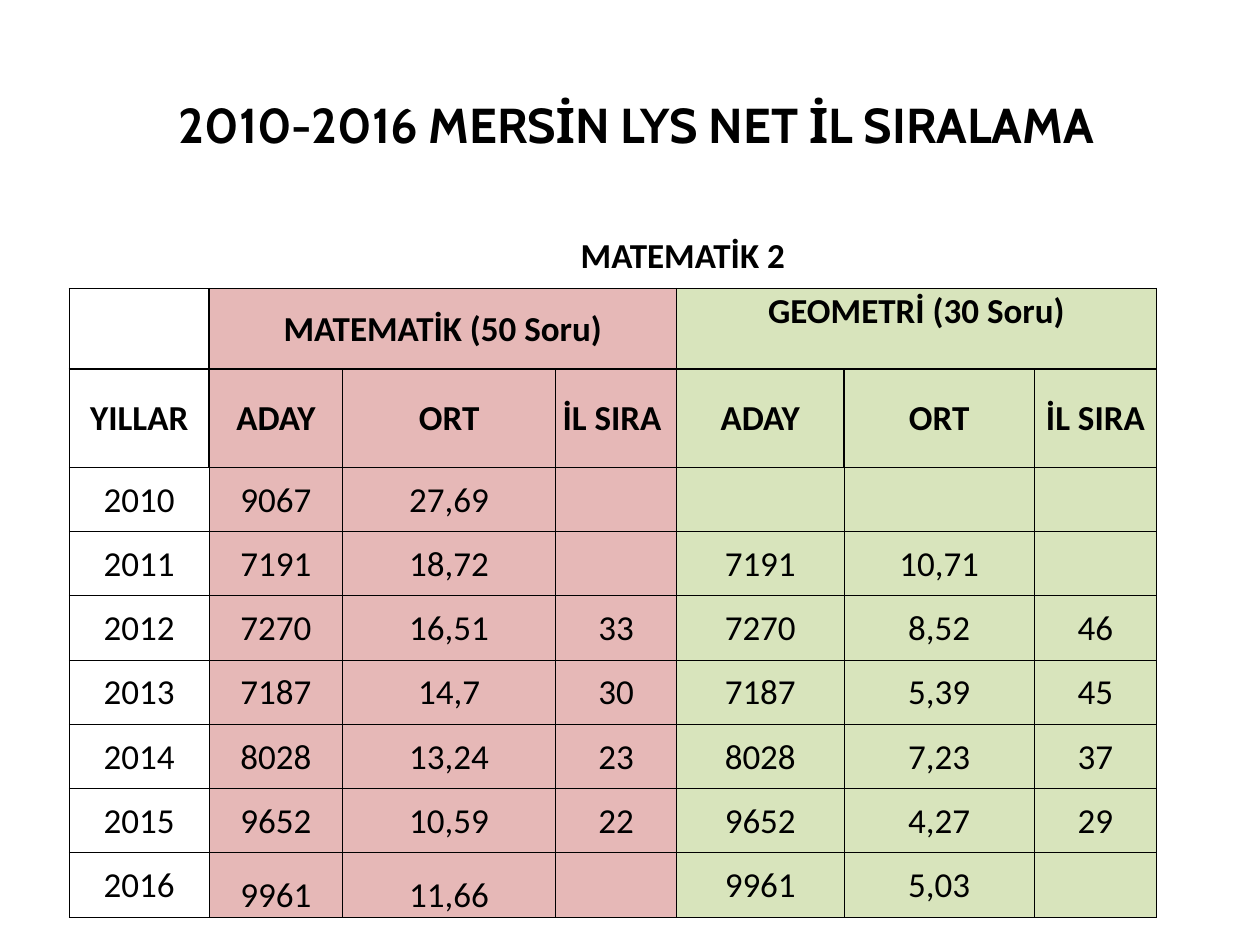
from dataclasses import dataclass

from lxml import etree
from pptx import Presentation
from pptx import util as u
from pptx.dml.color import RGBColor
from pptx.enum import text
from pptx.oxml.ns import qn


@dataclass(frozen=True)
class Theme:
    ink: str = "000000"
    maths: str = "E6B8B7"
    geometry: str = "D8E4BC"
    title_font: str = "Cabin"
    table_font: str = "Calibri"
    title_size: int = 28
    table_size: int = 20
    thin: float = 0.5
    thick: float = 1


THEME = Theme()
TITLE = "2010-2016 MERSİN LYS NET İL SIRALAMA"
COLUMNS = [1.11, 1.06, 1.69, 0.96, 1.33, 1.51, 0.97]
ROWS = [0.51, 0.64, 0.78] + [0.51] * 7
FILLS = [None] + [THEME.maths] * 3 + [THEME.geometry] * 3
HEADER_ROWS = 3
SPANS = [(0, 1, 6), (1, 1, 3), (1, 4, 6)]  # row, first column, last column
CELLS = [
    ["", "MATEMATİK 2", "", "", "", "", ""],
    ["", "MATEMATİK (50 Soru)", "", "", "GEOMETRİ (30 Soru)", "", ""],
    ["YILLAR", "ADAY", "ORT", "İL SIRA ", "ADAY", "ORT", "İL SIRA"],
    ["2010", "9067", "27,69", "", "", "", ""],
    ["2011", "7191", "18,72", "", "7191", "10,71", ""],
    ["2012", "7270", "16,51", "33", "7270", "8,52", "46"],
    ["2013", "7187", "14,7", "30", "7187", "5,39", "45"],
    ["2014", "8028", "13,24", "23", "8028", "7,23", "37"],
    ["2015", "9652", "10,59", "22", "9652", "4,27", "29"],
    ["2016", "9961", "11,66", "", "9961", "5,03", ""],
]
ANCHORS = {
    (1, 4): text.MSO_ANCHOR.TOP,
    (9, 1): text.MSO_ANCHOR.BOTTOM,
    (9, 2): text.MSO_ANCHOR.BOTTOM,
}


def add_span(para, words, font, size, bold):
    span = para.add_run()
    span.text = words
    span.font.name = font
    span.font.size = u.Pt(size)
    span.font.bold = bold
    span.font.color.rgb = RGBColor.from_string(THEME.ink)


def add_title(page):
    box = page.shapes.title
    box.left, box.top = u.Inches(0.55), u.Inches(0.7)
    box.width, box.height = u.Inches(8.91), u.Inches(0.57)
    frame = box.text_frame
    frame.word_wrap = True
    frame.vertical_anchor = text.MSO_ANCHOR.TOP
    frame.auto_size = text.MSO_AUTO_SIZE.SHAPE_TO_FIT_TEXT
    para = frame.paragraphs[0]
    para.alignment = text.PP_ALIGN.CENTER
    for words, bold in [(" ", False), (TITLE, True)]:
        add_span(para, words, THEME.title_font, THEME.title_size, bold)


def border_widths(row):
    """Widths in points for the left, right, top and bottom; 0 is no line."""
    if row == 0:
        return 0, 0, 0, THEME.thick
    if row < HEADER_ROWS:
        return (THEME.thick,) * 4
    top = THEME.thick if row == HEADER_ROWS else THEME.thin
    return THEME.thin, THEME.thin, top, THEME.thin


def set_borders(cell, widths):
    properties = cell._tc.get_or_add_tcPr()
    for place, (side, width) in enumerate(zip("LRTB", widths)):
        line = etree.Element(qn(f"a:ln{side}"), w=str(u.Pt(width)))
        if width:
            fill = etree.SubElement(line, qn("a:solidFill"))
            etree.SubElement(fill, qn("a:srgbClr"), val=THEME.ink)
        else:
            etree.SubElement(line, qn("a:noFill"))
        properties.insert(place, line)


def format_cell(cell, row, column):
    cell.margin_left = cell.margin_top = cell.margin_right = u.Inches(0.01)
    cell.margin_bottom = 0
    cell.vertical_anchor = ANCHORS.get((row, column), text.MSO_ANCHOR.MIDDLE)
    color = FILLS[column] if row else None
    if color:
        cell.fill.solid()
        cell.fill.fore_color.rgb = RGBColor.from_string(color)
    else:
        cell.fill.background()
    set_borders(cell, border_widths(row))


def add_scores(page):
    frame = page.shapes.add_table(
        len(ROWS), len(COLUMNS), u.Inches(0.55), u.Inches(1.78),
        u.Inches(sum(COLUMNS)), u.Inches(sum(ROWS)))
    table = frame.table
    table.first_row = table.horz_banding = False
    for column, width in zip(table.columns, COLUMNS):
        column.width = u.Inches(width)
    for row, height in zip(table.rows, ROWS):
        row.height = u.Inches(height)
    for row, first, last in SPANS:
        table.cell(row, first).merge(table.cell(row, last))
    for row, entries in enumerate(CELLS):
        for column, words in enumerate(entries):
            cell = table.cell(row, column)
            format_cell(cell, row, column)
            if words:
                para = cell.text_frame.paragraphs[0]
                para.alignment = text.PP_ALIGN.CENTER
                add_span(para, words, THEME.table_font, THEME.table_size,
                         row < HEADER_ROWS)


def main():
    deck = Presentation()
    deck.slide_width, deck.slide_height = u.Inches(10), u.Inches(7.5)
    page = deck.slides.add_slide(deck.slide_layouts.get_by_name("Title Only"))
    add_title(page)
    add_scores(page)
    deck.save("out.pptx")


if __name__ == "__main__":
    main()
